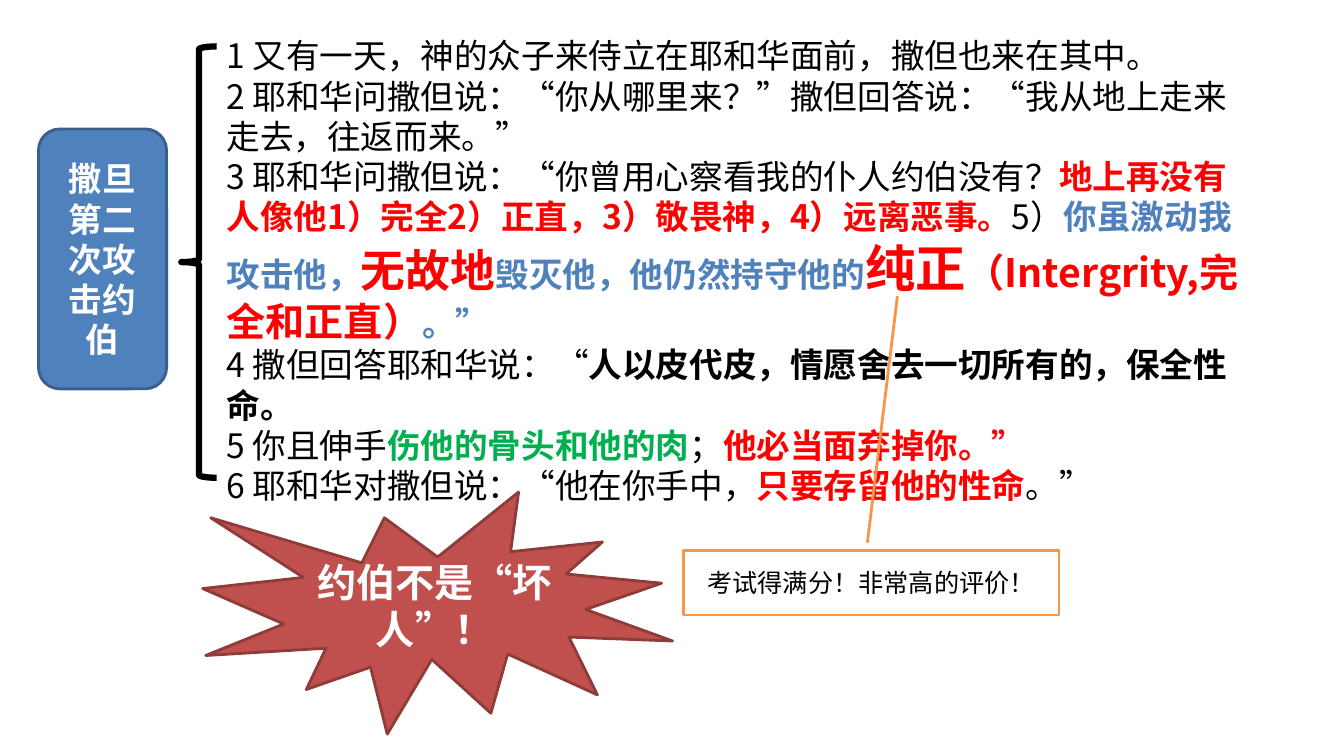
from dataclasses import dataclass

from lxml import etree
from pptx import Presentation
from pptx.dml.color import RGBColor
from pptx.enum.lang import MSO_LANGUAGE_ID
from pptx.enum.shapes import MSO_SHAPE
from pptx.enum.text import MSO_ANCHOR, MSO_AUTO_SIZE, PP_ALIGN
from pptx.oxml.ns import qn
from pptx.util import Cm, Pt

BRACE = MSO_SHAPE.LEFT_BRACE
ROUND = MSO_SHAPE.ROUNDED_RECTANGLE
NOTE = MSO_SHAPE.LINE_CALLOUT_1
BURST = MSO_SHAPE.EXPLOSION1
MIDDLE = MSO_ANCHOR.MIDDLE
CENTER = PP_ALIGN.CENTER
GROW = MSO_AUTO_SIZE.SHAPE_TO_FIT_TEXT
CHINESE = MSO_LANGUAGE_ID.SIMPLIFIED_CHINESE


@dataclass(frozen=True)
class Theme:
    black: str = "000000"
    white: str = "FFFFFF"
    red: str = "FF0000"
    blue: str = "4F81BD"
    navy: str = "3A5F8C"
    green: str = "00B050"
    orange: str = "F79646"
    brick: str = "C0504D"
    maroon: str = "8E3B39"
    font: str = "Noto Sans CJK SC"
    latin: str = "Calibri"
    note: int = 18
    body: int = 24
    large: int = 28
    huge: int = 32
    peak: int = 36


T = Theme()

# Each run: text, colour, bold, size
PLAIN = (T.black, False, T.body)
STRONG = (T.black, True, T.body)
RED = (T.red, True, T.body)
BLUE = (T.blue, True, T.body)
GREEN = (T.green, True, T.body)

VERSES = [
    [("1 又有一天，神的众子来侍立在耶和华面前，撒但也来在其中。", *PLAIN)],
    [("2 耶和华问撒但说：“你从哪里来？”撒但回答说：“我从地上走来走去，往返而来。”", *PLAIN)],
    [("3 耶和华问撒但说：“你曾用心察看我的仆人约伯没有？", *PLAIN),
     ("地上再没有人像他1）完全2）正直，3）敬畏神，4）远离恶事。", *RED),
     ("5）", *PLAIN),
     ("你虽激动我攻击他，", *BLUE),
     ("无故地", T.red, True, T.huge),
     ("毁灭他，他仍然持守他的", *BLUE),
     ("纯正", T.red, True, T.peak),
     ("（Intergrity,完全和正直）", T.red, True, T.large),
     ("。”", *BLUE)],
    [("4 撒但回答耶和华说：“", *PLAIN),
     ("人以皮代皮，情愿舍去一切所有的，保全性命。", *STRONG)],
    [("5 你且伸手", *PLAIN),
     ("伤他的骨头和他的肉", *GREEN),
     ("；", *PLAIN),
     ("他必当面弃掉你。”", *RED)],
    [("6 耶和华对撒但说：“他在你手中，", *PLAIN),
     ("只要存留他的性命", *RED),
     ("。”", *PLAIN)],
]


def style(run, color, bold, size, face=T.font):
    font = run.font
    font.name = face
    font.size = Pt(size)
    font.bold = bold
    font.color.rgb = RGBColor.from_string(color)
    font.language_id = CHINESE
    east = etree.Element(qn("a:ea"), typeface=T.font)
    run._r.rPr.find(qn("a:latin")).addnext(east)


def add_verses(slide, place, verses):
    frame = slide.shapes.add_textbox(*map(Cm, place)).text_frame
    frame.word_wrap = True
    frame.auto_size = GROW
    for i, verse in enumerate(verses):
        para = frame.add_paragraph() if i else frame.paragraphs[0]
        for text, *look in verse:
            run = para.add_run()
            run.text = text
            style(run, *look)


def add_form(slide, kind, place, line, width=2, fill=None):
    form = slide.shapes.add_shape(kind, *map(Cm, place))
    form.shadow.inherit = False
    form.line.color.rgb = RGBColor.from_string(line)
    form.line.width = Pt(width)
    if fill:
        form.fill.solid()
        form.fill.fore_color.rgb = RGBColor.from_string(fill)
    else:
        form.fill.background()
    return form


def add_label(form, text, *look):
    frame = form.text_frame
    frame.text = text
    frame.word_wrap = True
    frame.vertical_anchor = MIDDLE
    para = frame.paragraphs[0]
    para.alignment = CENTER
    style(para.runs[0], *look)


def main():
    deck = Presentation()
    deck.slide_width, deck.slide_height = Cm(33.87), Cm(19.05)
    slide = deck.slides.add_slide(deck.slide_layouts[6])

    add_verses(slide, (5.46, 0.76, 26.14, 12.22), VERSES)
    add_form(slide, BRACE, (4.57, 1.17, 0.89, 10.87), T.black, 4.5)

    topic = add_form(slide, ROUND, (0.97, 3.25, 3.23, 6.55), T.navy, fill=T.blue)
    add_label(topic, "撒旦第二次攻击约伯", T.white, True, T.body)

    note = add_form(slide, NOTE, (17.22, 13.87, 9.47, 1.63), T.orange, fill=T.white)
    for i, value in enumerate((-0.12, 0.49, -3.93, 0.57)):
        note.adjustments[i] = value
    add_label(note, "考试得满分！非常高的评价！", T.black, False, T.note)

    burst = add_form(slide, BURST, (5.11, 12.4, 11.84, 6.1), T.maroon, fill=T.brick)
    add_label(burst, "约伯不是“坏人”！", T.white, True, T.large, T.latin)

    deck.save("out.pptx")


if __name__ == "__main__":
    main()
